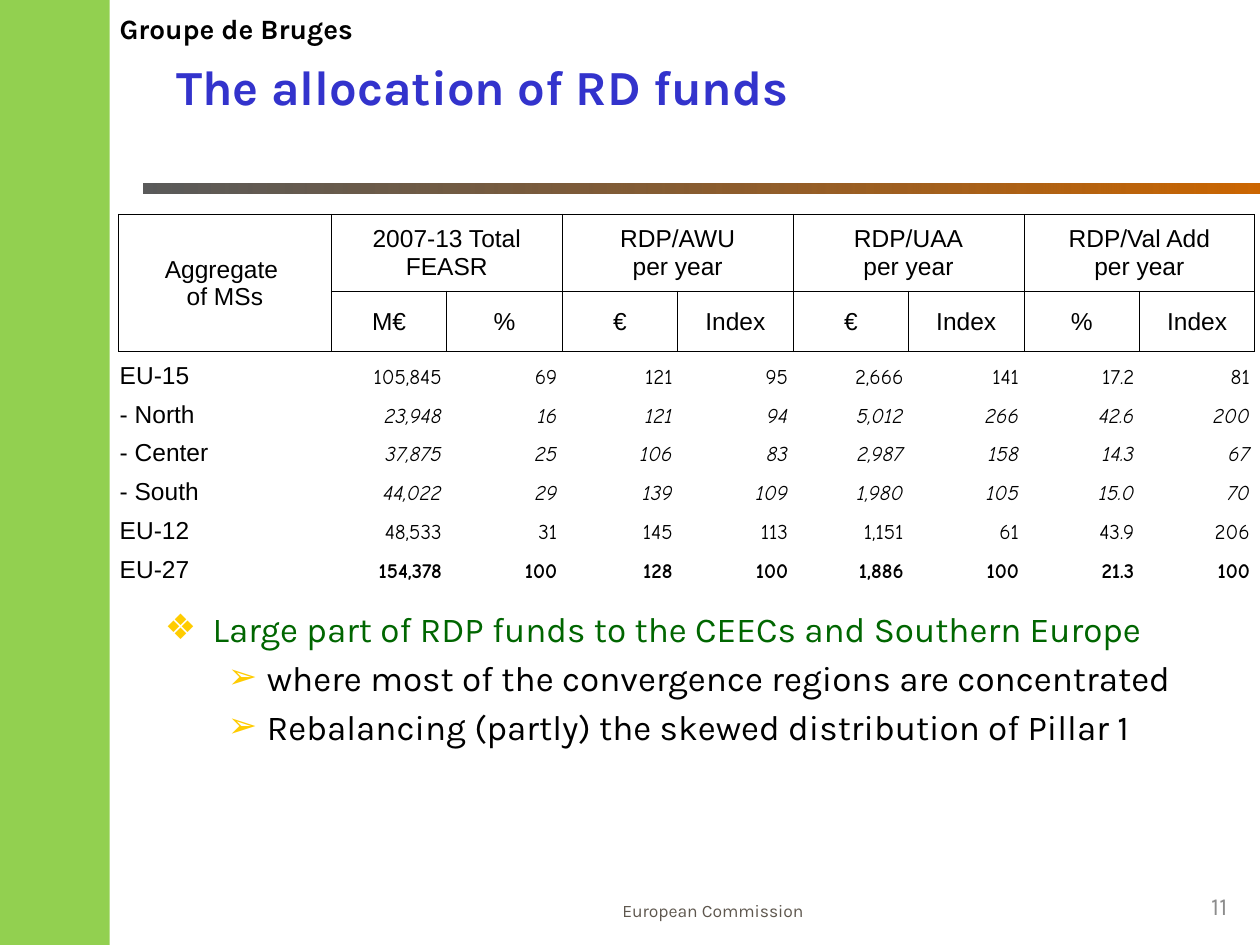
import dataclasses

import lxml.etree
import pptx
import pptx.dml.color
import pptx.enum.dml
import pptx.enum.shapes
import pptx.enum.text
import pptx.oxml
import pptx.oxml.ns
import pptx.util

Inches = pptx.util.Inches
Pt = pptx.util.Pt
RGB = pptx.dml.color.RGBColor.from_string
Align = pptx.enum.text.PP_ALIGN
Anchor = pptx.enum.text.MSO_ANCHOR
qn = pptx.oxml.ns.qn


@dataclasses.dataclass(frozen=True)
class Theme:
    black: str = "000000"
    strip: str = "92D050"
    bar_start: str = "292929"
    bar_end: str = "CC6600"
    bullet: str = "FFCC00"
    bullet_font: str = "Karla"
    owner: tuple = (("name", "Karla"), ("size", Pt(16)), ("bold", True), ("color", "000000"))
    footer: tuple = (("name", "Karla"), ("size", Pt(10)), ("color", "5E574E"))
    number: tuple = (("name", "Karla"), ("size", Pt(14)), ("color", "8C8C8C"))
    title: tuple = (("name", "Karla"), ("size", Pt(28)), ("bold", True), ("color", "3333CC"))
    label: tuple = (("name", "Arial"), ("size", Pt(14)), ("color", "000000"))
    figure: tuple = (("name", "Comic Neue"), ("size", Pt(12)), ("color", "000000"))
    body: tuple = (("name", "Karla"), ("size", Pt(20)))
    claim: str = "006600"


THEME = Theme()
NO_GRID_STYLE = "{2D5ABB26-0587-4C30-8999-92F81FD0307C}"
HEADINGS = ["2007-13 Total FEASR", "RDP/AWU\nper year", "RDP/UAA\nper year", "RDP/Val Add\nper year"]
UNITS = ["M€", "%", "€", "Index", "€", "Index", "%", "Index"]
AGGREGATES = [
    ("EU-15", "105,845 69 121 95 2,666 141 17.2 81", {}),
    ("- North", "23,948 16 121 94 5,012 266 42.6 200", {"italic": True}),
    ("- Center", "37,875 25 106 83 2,987 158 14.3 67", {"italic": True}),
    ("- South", "44,022 29 139 109 1,980 105 15.0 70", {"italic": True}),
    ("EU-12", "48,533 31 145 113 1,151 61 43.9 206", {}),
    ("EU-27", "154,378 100 128 100 1,886 100 21.3 100", {"bold": True}),
]
POINTS = [
    (0, "Large part of RDP funds to the CEECs and Southern Europe"),
    (1, "where most of the convergence regions are concentrated"),
    (1, "Rebalancing (partly) the skewed distribution of Pillar 1"),
]


def place(box):
    return [Inches(length) for length in box]


def apply(target, values):
    for name, value in values.items():
        setattr(target, name, value)


def write(para, text, style, **extra):
    span = para.add_run()
    span.text = text
    values = {**dict(style), **extra}
    span.font.color.rgb = RGB(values.pop("color"))
    apply(span.font, values)


def add_block(page, box):
    block = page.shapes.add_shape(pptx.enum.shapes.MSO_SHAPE.RECTANGLE, *place(box))
    block.shadow.inherit = False
    block.line.fill.background()
    return block


def add_gradient_bar(page, box):
    bar = add_block(page, box)
    bar.fill.gradient()
    bar.fill.gradient_angle = 0
    for stop, color, position in zip(bar.fill.gradient_stops, (THEME.bar_start, THEME.bar_end), (0, 1)):
        stop.color.rgb = RGB(color)
        stop.position = position
    first = next(bar.fill._xPr.iter(qn("a:srgbClr")))
    lxml.etree.SubElement(first, qn("a:alpha"), val="77000")


def add_side_strip(page, box):
    strip = add_block(page, box)
    strip.fill.solid()
    strip.fill.fore_color.rgb = RGB(THEME.strip)


def add_caption(page, box, text, style, align=Align.LEFT, **frame_values):
    frame = page.shapes.add_textbox(*place(box)).text_frame
    apply(frame, {"word_wrap": True, "vertical_anchor": Anchor.BOTTOM, **frame_values})
    frame.paragraphs[0].alignment = align
    write(frame.paragraphs[0], text, style)


def set_title(page, box, text):
    title = page.shapes.title
    apply(title, dict(zip(("left", "top", "width", "height"), place(box))))
    apply(title.text_frame, {"vertical_anchor": Anchor.MIDDLE, "word_wrap": True,
                             "auto_size": pptx.enum.text.MSO_AUTO_SIZE.NONE})
    para = title.text_frame.paragraphs[0]
    para.alignment = Align.LEFT
    write(para, text, THEME.title)


def set_borders(cell):
    properties = cell._tc.get_or_add_tcPr()
    for index, side in enumerate("LRTB"):
        line = pptx.oxml.parse_xml(
            f'<a:ln{side} xmlns:a="http://schemas.openxmlformats.org/drawingml/2006/main" w="6350">'
            f'<a:solidFill><a:srgbClr val="{THEME.black}"/></a:solidFill></a:ln{side}>')
        properties.insert(index, line)


def fill_cell(cell, text, style, align, anchor, right=0.01, **extra):
    cell.fill.background()
    apply(cell, {"margin_left": Inches(0.01), "margin_top": Inches(0.01), "margin_right": Inches(right),
                 "margin_bottom": 0, "vertical_anchor": anchor})
    for index, line in enumerate(text.split("\n")):
        para = cell.text_frame.add_paragraph() if index else cell.text_frame.paragraphs[0]
        para.alignment = align
        write(para, line, style, **extra)


def add_funds_table(page, box):
    label_width, heading_height = 1.69, 0.61
    row_height = (box[3] - heading_height) / (len(AGGREGATES) + 1)
    table = page.shapes.add_table(len(AGGREGATES) + 2, len(UNITS) + 1, *place(box)).table
    apply(table, {"first_row": False, "horz_banding": False})
    table._tbl.tblPr.find(qn("a:tableStyleId")).text = NO_GRID_STYLE
    for index, column in enumerate(table.columns):
        column.width = Inches((box[2] - label_width) / len(UNITS) if index else label_width)
    for index, row in enumerate(table.rows):
        row.height = Inches(row_height if index else heading_height)

    header = (THEME.label, Align.CENTER, Anchor.MIDDLE)
    table.cell(0, 0).merge(table.cell(1, 0))
    fill_cell(table.cell(0, 0), "Aggregate \nof MSs", *header)
    for index, heading in enumerate(HEADINGS):
        first = table.cell(0, 2 * index + 1)
        first.merge(table.cell(0, 2 * index + 2))
        fill_cell(first, heading, *header)
    for column, unit in enumerate(UNITS, 1):
        fill_cell(table.cell(1, column), unit, *header)
    for row in range(2):
        for column in range(len(UNITS) + 1):
            set_borders(table.cell(row, column))

    for row, (name, figures, emphasis) in enumerate(AGGREGATES, 2):
        fill_cell(table.cell(row, 0), name, THEME.label, Align.LEFT, Anchor.BOTTOM)
        for column, figure in enumerate(figures.split(), 1):
            fill_cell(table.cell(row, column), figure, THEME.figure, Align.RIGHT, Anchor.BOTTOM,
                      0.04, **emphasis)


def add_points(page, box):
    frame = page.shapes.add_textbox(*place(box)).text_frame
    frame.word_wrap = True
    levels = [("❖", 0.38, 0.38, THEME.claim), ("➢", 0.81, 0.31, THEME.black)]
    for index, (level, text) in enumerate(POINTS):
        mark, margin, hang, color = levels[level]
        para = frame.add_paragraph() if index else frame.paragraphs[0]
        para.level = level
        properties = para._p.get_or_add_pPr()
        properties.set("marL", str(Inches(margin)))
        properties.set("indent", str(-Inches(hang)))
        tint = lxml.etree.SubElement(properties, qn("a:buClr"))
        lxml.etree.SubElement(tint, qn("a:srgbClr"), val=THEME.bullet)
        lxml.etree.SubElement(properties, qn("a:buFont"), typeface=THEME.bullet_font)
        lxml.etree.SubElement(properties, qn("a:buChar"), char=mark)
        if index:
            para.space_before = Pt(4)
        write(para, text, THEME.body, color=color)


def main():
    deck = pptx.Presentation()
    apply(deck, {"slide_width": Inches(10), "slide_height": Inches(7.5)})
    page = deck.slides.add_slide(deck.slide_layouts[5])
    add_gradient_bar(page, (1.14, 1.46, 8.87, 0.08))
    add_side_strip(page, (0, 0, 0.87, 7.5))
    add_caption(page, (0.85, 0.04, 2.22, 0.37), "Groupe de Bruges", THEME.owner, word_wrap=False,
                auto_size=pptx.enum.text.MSO_AUTO_SIZE.SHAPE_TO_FIT_TEXT)
    add_caption(page, (4.84, 7.05, 3.39, 0.31), "European Commission", THEME.footer)
    add_caption(page, (9.28, 7.03, 0.56, 0.31), "11", THEME.number, Align.RIGHT,
                vertical_anchor=Anchor.MIDDLE)
    set_title(page, (1.3, 0.29, 8.59, 0.79), "The allocation of RD funds")
    add_funds_table(page, (0.94, 1.7, 9.02, 2.76))
    add_points(page, (1.21, 4.77, 8.36, 2.23))
    deck.save("out.pptx")


if __name__ == "__main__":
    main()
